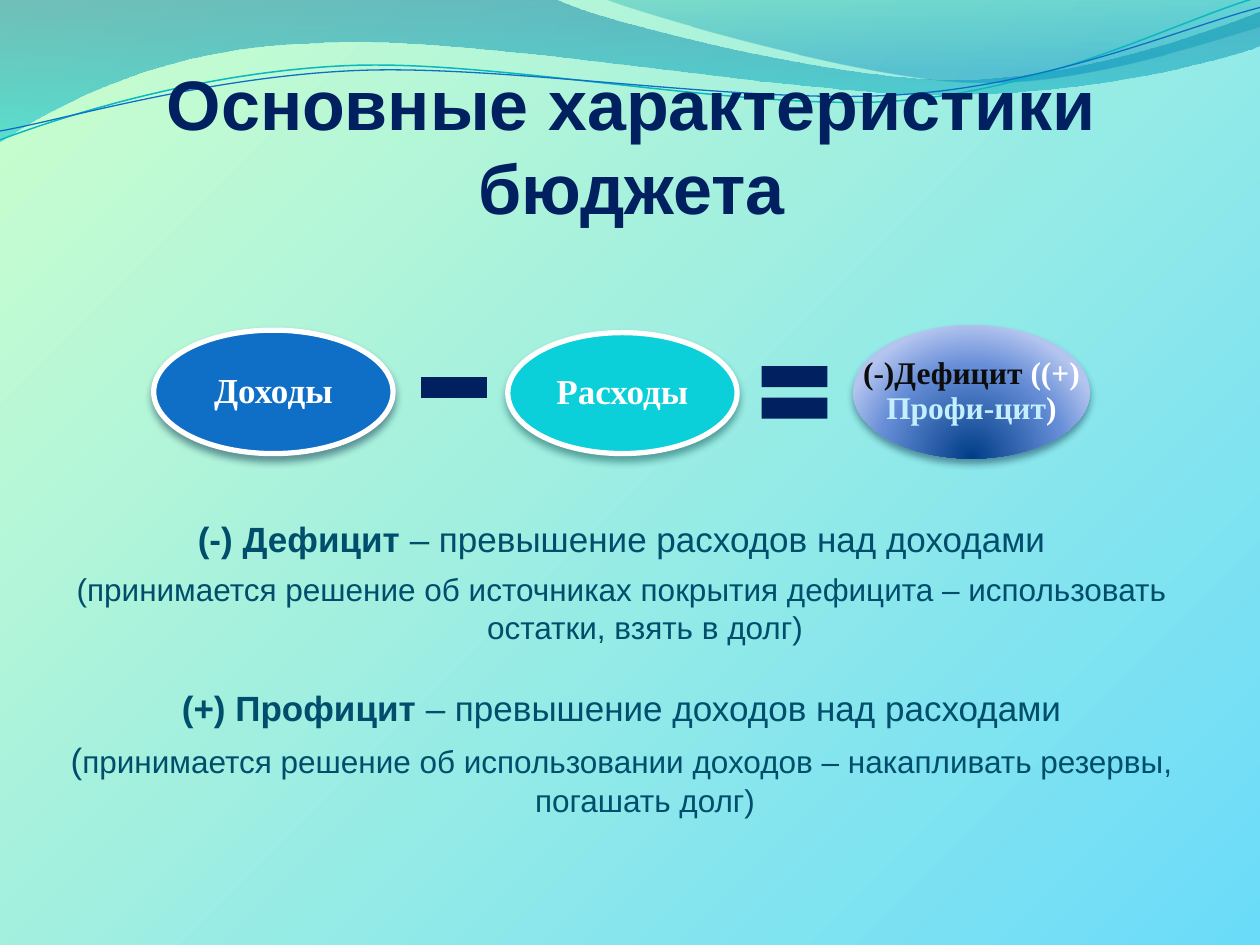
from dataclasses import dataclass
from math import cos, radians, sin

from lxml.etree import SubElement
from pptx import Presentation
from pptx.dml.color import RGBColor
from pptx.enum.shapes import MSO_SHAPE
from pptx.enum.text import MSO_ANCHOR, PP_ALIGN
from pptx.oxml.ns import qn
from pptx.util import Inches, Pt


@dataclass(frozen=True)
class Theme:
    navy: str = "002060"
    body: str = "004E6C"
    white: str = "FFFFFF"
    black: str = "0D0D0D"
    pale: str = "C4EFFF"
    blue: str = "0F6FC6"
    cyan: str = "0BD0D9"
    teal: str = "0AB8BF"
    blueshade: str = "042747"
    cyanshade: str = "024B4E"
    sans: str = "Arial"
    serif: str = "Times New Roman"
    title: int = 40
    lead: int = 20
    note: int = 18


T = Theme()
TILT = 2.7  # counterclockwise turn of the thin lines, in degrees

# Gradient stops: position, colour, opacity (all in percent)
PAGE = [(0, "6BDBFA", 100), (100, "CCFFCC", 100)]
WAVE = [(0, "0074A1", 45), (100, "00C6CF", 55)]
CREST = [(0, "00A1A9", 30), (80, "008BBF", 45)]
BALL = [(0, "003D87", 100), (68, "668DD7", 100), (100, "B3C4EF", 100)]

# Outlines: a start point, then points (2 numbers) or Bezier curves (6 numbers)
WAVEPATH = [
    (0, 0), (4.4, -0.01), (4.76, 0.17, 6.64, 0.63, 7.58, 0.63),
    (8.53, 0.63, 9.58, 0.26, 10, 0.09), (10.01, 0.36),
    (9.83, 0.44, 8.7, 0.76, 7.46, 0.75), (6.22, 0.75, 3.82, 0.28, 2.57, 0.34),
    (1.29, 0.36, 0.46, 0.83, -0.01, 1.13), (0, 0)]
CRESTPATH = [
    (4.79, -0.01), (5.09, 0.11, 6.82, 0.62, 7.69, 0.65),
    (8.56, 0.69, 9.61, 0.32, 10, 0.21), (10, 0), (4.79, -0.01)]
TEALPATH = [
    (0, 1.11), (0.48, 0.93, 1.58, 0.57, 2.77, 0.52),
    (3.95, 0.47, 5.93, 0.89, 7.13, 0.8), (8.33, 0.71, 9.38, 0.15, 9.98, -0.02)]
BLUEPATH = [
    (0, 1.04), (0.47, 0.96, 1.64, 0.61, 2.83, 0.56),
    (4.03, 0.51, 5.97, 0.84, 7.17, 0.75), (8.36, 0.67, 9.41, 0.21, 10, 0.06)]


def rgb(code):
    return RGBColor.from_string(code)


def tint(node, code, part):
    color = SubElement(node, qn("a:srgbClr"), val=code)
    if part < 100:
        SubElement(color, qn("a:alpha"), val=str(part * 1000))


def blend(fill, root, stops, focus=None):
    """Linear downward gradient, or a circular one around focus (l, t, r, b)."""
    fill.gradient()
    grad = root.find(".//" + qn("a:gradFill"))
    for child in list(grad):
        grad.remove(child)
    group = SubElement(grad, qn("a:gsLst"))
    for place, code, part in stops:
        tint(SubElement(group, qn("a:gs"), pos=str(place * 1000)), code, part)
    if focus:
        ring = SubElement(grad, qn("a:path"), {"path": "circle"})
        SubElement(ring, qn("a:fillToRect"),
                   {side: str(v * 1000) for side, v in zip("ltrb", focus)})
    else:
        SubElement(grad, qn("a:lin"), ang="5400000", scaled="1")


def pairs(part):
    return list(zip(part[::2], part[1::2]))


def turn(path, mid, angle):
    """Turn every point of an outline clockwise about mid."""
    c, s = cos(radians(angle)), sin(radians(angle))

    def spin(x, y):
        x, y = x - mid[0], y - mid[1]
        return mid[0] + x * c - y * s, mid[1] + x * s + y * c

    return [tuple(v for spot in pairs(part) for v in spin(*spot)) for part in path]


def outline(slide, path, close):
    spots = [(Inches(x), Inches(y)) for part in path for x, y in pairs(part)]
    pen = slide.shapes.build_freeform(*spots[0])
    pen.add_line_segments(spots[1:], close=close)
    shape = pen.convert_to_shape()
    shape.shadow.inherit = False
    # Join the three points of each curve into one Bezier segment
    lines = iter(list(shape.element.iter(qn("a:lnTo"))))
    for part in path[1:]:
        line = next(lines)
        if len(part) == 6:
            line.tag = qn("a:cubicBezTo")
            for _ in range(2):
                extra = next(lines)
                line.append(extra[0])
                extra.getparent().remove(extra)
    return shape


def wave(slide, path, stops):
    shape = outline(slide, path, True)
    shape.line.fill.background()
    blend(shape.fill, shape.element, stops)


def thread(slide, path, mid, color, width):
    shape = outline(slide, turn(path, mid, TILT), False)
    shape.rotation = -TILT
    shape.fill.background()
    shape.line.color.rgb = rgb(color)
    shape.line.width = Pt(width)


def write(para, runs, font):
    """Add runs given as text, size, colour, bold."""
    para.alignment = PP_ALIGN.CENTER
    for text, size, color, bold in runs:
        run = para.add_run()
        run.text = text
        run.font.name = font
        run.font.size = Pt(size)
        run.font.bold = bold
        run.font.color.rgb = rgb(color)


def textbox(slide, box, anchor=MSO_ANCHOR.MIDDLE):
    frame = slide.shapes.add_textbox(*map(Inches, box)).text_frame
    frame.word_wrap = True
    frame.vertical_anchor = anchor
    return frame


def preset(slide, kind, box):
    shape = slide.shapes.add_shape(kind, *map(Inches, box))
    shape.shadow.inherit = False
    shape.line.fill.background()
    return shape


def sign(slide, kind, left, top):
    shape = preset(slide, kind, (left, top, 0.71, 0.71))
    shape.fill.solid()
    shape.fill.fore_color.rgb = rgb(T.navy)


def oval(slide, box, runs, shade, color=None):
    shape = preset(slide, MSO_SHAPE.OVAL, box)
    if color:
        shape.fill.solid()
        shape.fill.fore_color.rgb = rgb(color)
        shape.line.color.rgb = rgb(T.white)
        shape.line.width = Pt(3)
    else:
        blend(shape.fill, shape.element, BALL, (50, 130, 50, -30))
    effects = shape.element.spPr.find(qn("a:effectLst"))
    cast = SubElement(effects, qn("a:outerShdw"), blurRad=str(Pt(4.5)),
                      dist=str(Pt(3)), dir="5400000", rotWithShape="0")
    tint(cast, shade, 48)
    # The label spans the whole oval
    frame = textbox(slide, box)
    frame.margin_left = frame.margin_right = Inches(0.03)
    frame.margin_top = frame.margin_bottom = Inches(0.03)
    para = frame.paragraphs[0]
    para.line_spacing = 0.9
    write(para, runs, T.serif)


def terms(slide):
    frame = textbox(slide, (0.43, 3.83, 9, 3.07), MSO_ANCHOR.TOP)
    frame.margin_top = Inches(0.28)
    rows = [
        (0, [("(-) Дефицит ", T.lead, True),
             ("– превышение расходов над доходами", T.lead, False)]),
        (6, [("(принимается решение об источниках покрытия дефицита – "
              "использовать остатки, взять в долг)", T.note, False)]),
        (23, [("(+) Профицит ", T.lead, True),
              ("– превышение доходов над расходами", T.lead, False)]),
        (6, [("(", T.lead, False),
             ("принимается решение об использовании доходов – "
              "накапливать резервы, погашать долг)", T.note, False)])]
    for i, (gap, runs) in enumerate(rows):
        para = frame.add_paragraph() if i else frame.paragraphs[0]
        para.space_before = Pt(gap)
        props = para._p.get_or_add_pPr()
        props.set("marL", str(Inches(0.38)))
        props.set("indent", str(Inches(-0.37)))
        write(para, [(text, size, T.body, bold) for text, size, bold in runs], T.sans)


def main():
    deck = Presentation()
    deck.slide_width, deck.slide_height = Inches(10), Inches(7.5)
    slide = deck.slides.add_slide(deck.slide_layouts[6])
    # Backdrop
    blend(slide.background.fill, slide.element, PAGE, (100, 100, 0, 0))
    wave(slide, WAVEPATH, WAVE)
    wave(slide, CRESTPATH, CREST)
    thread(slide, TEALPATH, (4.99, 0.58), T.teal, 0.85)
    thread(slide, BLUEPATH, (5, 0.59), T.blue, 0.75)
    # Title and definitions
    title = textbox(slide, (0.51, 0.52, 9, 1.25))
    write(title.paragraphs[0],
          [("Основные характеристики бюджета", T.title, T.navy, True)], T.sans)
    terms(slide)
    # Equation
    oval(slide, (1.22, 2.62, 1.9, 0.98), [("Доходы", T.lead, T.white, True)],
         T.blueshade, T.blue)
    sign(slide, MSO_SHAPE.MATH_MINUS, 3.25, 2.72)
    oval(slide, (4.03, 2.64, 1.82, 0.96), [("Расходы", T.lead, T.white, True)],
         T.cyanshade, T.cyan)
    sign(slide, MSO_SHAPE.MATH_EQUAL, 5.95, 2.76)
    result = [("(-)Дефицит ", T.black), ("((+) ", T.white),
              ("Профи-цит", T.pale), (")", T.white)]
    oval(slide, (6.77, 2.58, 1.88, 1.06),
         [(text, T.note, color, True) for text, color in result], T.blueshade)
    deck.save("out.pptx")


if __name__ == "__main__":
    main()
